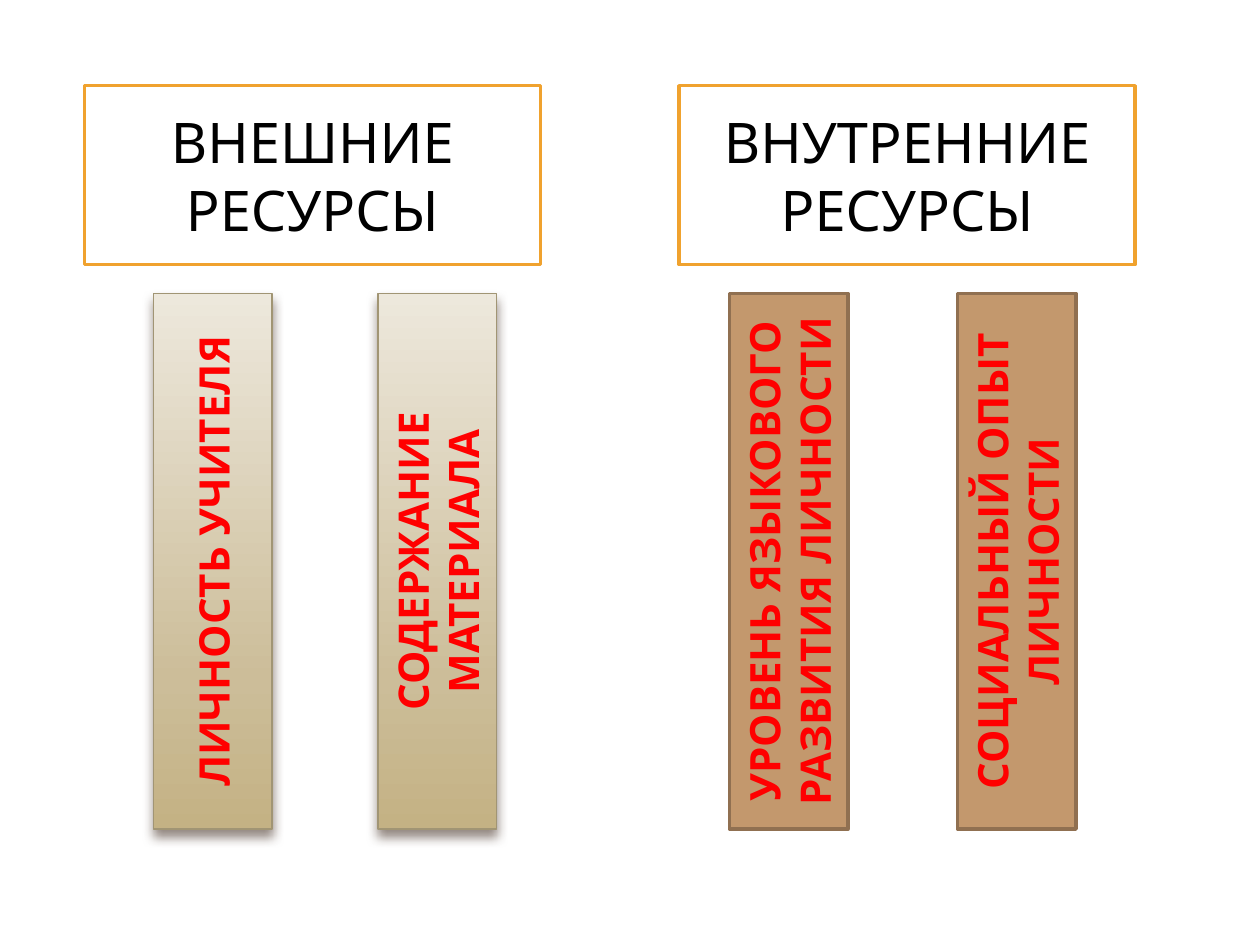
from lxml import etree
from pptx import Presentation
from pptx.dml.color import RGBColor
from pptx.enum.shapes import MSO_SHAPE
from pptx.enum.text import MSO_ANCHOR, PP_ALIGN
from pptx.oxml import parse_xml
from pptx.oxml.ns import nsdecls, qn
from pptx.util import Inches, Pt

FONT = "Karla"
HEADER_WIDTH, HEADER_HEIGHT = 3.62, 1.42
PILLAR_WIDTH, PILLAR_HEIGHT = 0.94, 4.25
HEADER_TOP, PILLAR_TOP = 0.68, 2.33
SAND_STOPS = [(0, "EDE8DC"), (72, "CCBD99"), (100, "C4B284")]


def color(value):
    return RGBColor.from_string(value)


def add_box(slide, left, top, width, height, text, fill, line, line_width,
            size, text_color, bold=False):
    box = slide.shapes.add_shape(MSO_SHAPE.RECTANGLE, Inches(left), Inches(top),
                                 Inches(width), Inches(height))
    box.shadow.inherit = False
    box.fill.solid()
    box.fill.fore_color.rgb = color(fill)
    box.line.color.rgb = color(line)
    box.line.width = Pt(line_width)
    frame = box.text_frame
    frame.word_wrap = True
    frame.vertical_anchor = MSO_ANCHOR.MIDDLE
    frame.text = text
    para = frame.paragraphs[0]
    para.alignment = PP_ALIGN.CENTER
    font = para.runs[0].font
    font.name, font.size, font.bold = FONT, Pt(size), bold
    font.color.rgb = color(text_color)
    return box


def add_sand_effect(box):
    """Replace the plain fill with a vertical gradient and add a soft shadow."""
    properties = box.fill._xPr
    stops = "".join(f'<a:gs pos="{position * 1000}"><a:srgbClr val="{value}"/></a:gs>'
                    for position, value in SAND_STOPS)
    gradient = parse_xml(f'<a:gradFill {nsdecls("a")} rotWithShape="1"><a:gsLst>{stops}'
                         '</a:gsLst><a:lin ang="5400000" scaled="0"/></a:gradFill>')
    properties.replace(properties.find(qn("a:solidFill")), gradient)
    effects = properties.find(qn("a:effectLst"))
    shadow = etree.SubElement(effects, qn("a:outerShdw"), blurRad=str(Pt(6)),
                              dist=str(Pt(4)), dir="5400000", rotWithShape="0")
    tint = etree.SubElement(shadow, qn("a:srgbClr"), val="4E3B30")
    etree.SubElement(tint, qn("a:alpha"), val="60000")


def add_pillar(slide, left, text, fill, line, line_width):
    box = add_box(slide, left, PILLAR_TOP, PILLAR_WIDTH, PILLAR_HEIGHT, text,
                  fill, line, line_width, 24, "FF0000", bold=True)
    box.text_frame._txBody.bodyPr.set("vert", "vert270")
    return box


def add_resource_group(slide, left, title, pillars, fill, line, line_width, sand=False):
    # Header
    add_box(slide, left, HEADER_TOP, HEADER_WIDTH, HEADER_HEIGHT, title,
            "FFFFFF", "F0A22E", 2, 32, "000000")
    # Pillars, offset from the header's left edge
    for offset, text in pillars:
        pillar = add_pillar(slide, left + offset, text, fill, line, line_width)
        if sand:
            add_sand_effect(pillar)


def main():
    deck = Presentation()
    deck.slide_width, deck.slide_height = Inches(10), Inches(7.5)
    slide = deck.slides.add_slide(deck.slide_layouts[6])
    # External resources
    add_resource_group(slide, 0.67, "ВНЕШНИЕ РЕСУРСЫ",
                       [(0.55, "ЛИЧНОСТЬ УЧИТЕЛЯ"), (2.33, "СОДЕРЖАНИЕ МАТЕРИАЛА")],
                       "CCBD99", "A19574", 0.79, sand=True)
    # Internal resources
    add_resource_group(slide, 5.39, "ВНУТРЕННИЕ РЕСУРСЫ",
                       [(0.4, "УРОВЕНЬ ЯЗЫКОВОГО РАЗВИТИЯ ЛИЧНОСТИ"),
                        (2.21, "СОЦИАЛЬНЫЙ ОПЫТ ЛИЧНОСТИ")],
                       "C3986D", "907051", 2)
    deck.save("out.pptx")


if __name__ == "__main__":
    main()
